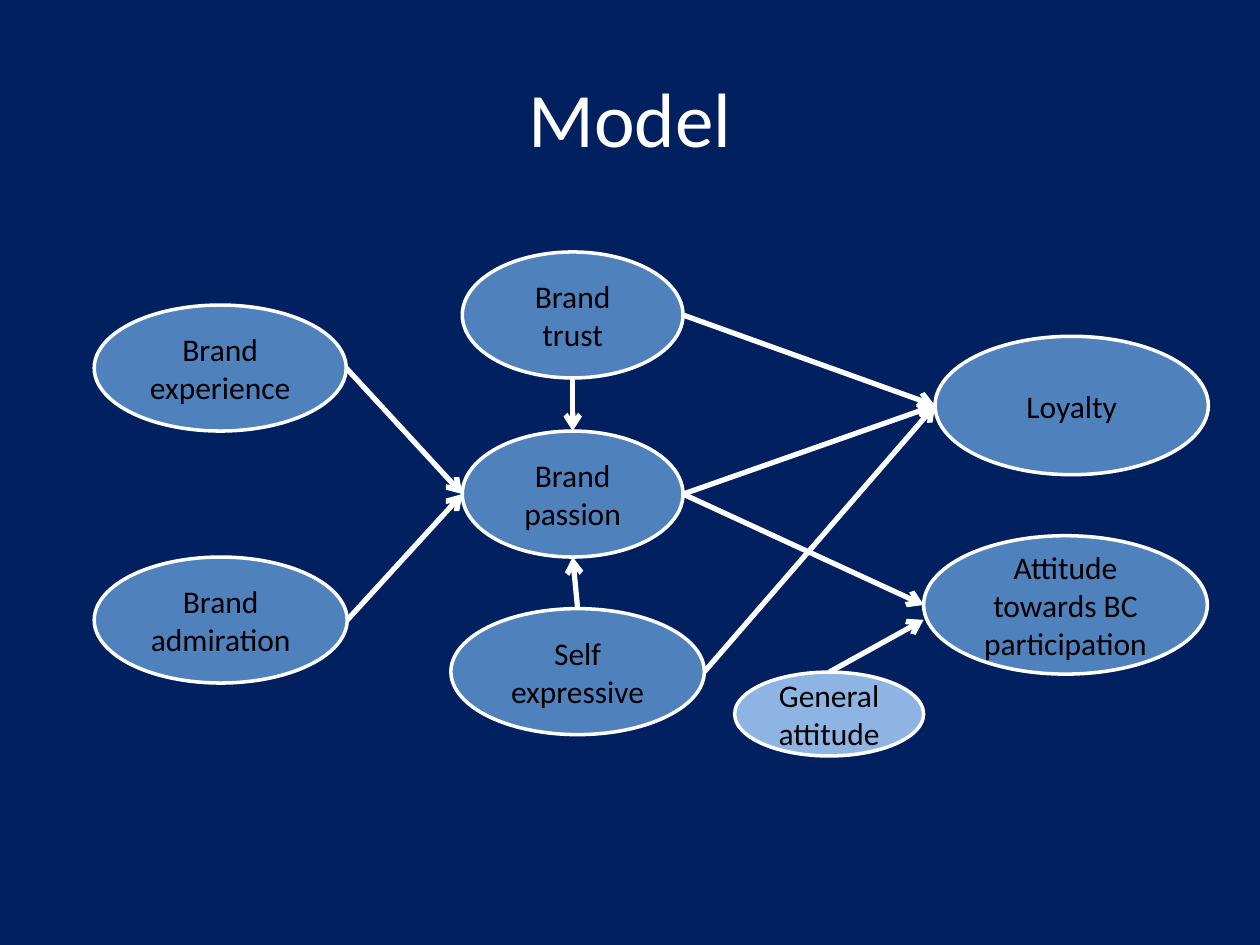
from lxml.etree import SubElement
from pptx import Presentation
from pptx.dml.color import RGBColor
from pptx.enum.shapes import MSO_CONNECTOR as Connector, MSO_SHAPE as Shape
from pptx.enum.text import MSO_ANCHOR as Anchor, PP_ALIGN as Align
from pptx.oxml.ns import qn
from pptx.util import Cm, Pt

NAVY = RGBColor(0x00, 0x20, 0x60)
BLUE = RGBColor(0x4F, 0x81, 0xBD)
LIGHT_BLUE = RGBColor(0x8E, 0xB4, 0xE3)
WHITE = RGBColor(0xFF, 0xFF, 0xFF)
BLACK = RGBColor(0x00, 0x00, 0x00)
FONT = "Calibri"

CONSTRUCTS = [
    ("Loyalty", 18.85, 6.78, 5.51, 2.79, BLUE),
    ("Self expressive", 9.09, 12.27, 5.11, 2.54, BLUE),
    ("Brand passion", 9.32, 8.69, 4.45, 2.54, BLUE),
    ("Brand trust", 9.32, 5.08, 4.45, 2.54, BLUE),
    ("Brand experience", 1.9, 6.15, 5.08, 2.54, BLUE),
    ("Brand admiration", 1.9, 11.23, 5.1, 2.54, BLUE),
    ("Attitude towards BC participation", 18.62, 10.8, 5.72, 2.79, BLUE),
    ("General attitude", 14.81, 13.55, 3.81, 1.69, LIGHT_BLUE),
]

EFFECTS = [
    ("Brand trust", "bottom", "Brand passion", "top", 0),
    ("Brand admiration", "right", "Brand passion", "left", 0),
    ("Brand experience", "right", "Brand passion", "left", 0),
    ("Self expressive", "top", "Brand passion", "bottom", 0),
    ("Brand passion", "right", "Loyalty", "left", 0),
    ("Self expressive", "right", "Loyalty", "left", 0),
    ("Brand trust", "right", "Loyalty", "left", 0),
    ("Brand passion", "right", "Attitude towards BC participation", "left", 0),
    ("General attitude", "top", "Attitude towards BC participation", "left", 0.3),
]

SIDES = {"top": (0.5, 0), "left": (0, 0.5), "bottom": (0.5, 1), "right": (1, 0.5)}


def write_text(holder, wording, size, color):
    frame = holder.text_frame
    frame.word_wrap = True
    frame.vertical_anchor = Anchor.MIDDLE
    paragraph = frame.paragraphs[0]
    paragraph.alignment = Align.CENTER
    run = paragraph.add_run()
    run.text = wording
    run.font.name = FONT
    run.font.size = Pt(size)
    run.font.color.rgb = color


def add_title(slide, wording):
    title = slide.shapes.add_textbox(Cm(1.27), Cm(0.76), Cm(22.86), Cm(3.18))
    write_text(title, wording, 44, WHITE)


def add_construct(slide, name, left, top, width, height, color):
    construct = slide.shapes.add_shape(
        Shape.OVAL, Cm(left), Cm(top), Cm(width), Cm(height))
    construct.shadow.inherit = False
    construct.fill.solid()
    construct.fill.fore_color.rgb = color
    construct.line.color.rgb = WHITE
    construct.line.width = Pt(2)
    write_text(construct, name, 18, BLACK)
    return construct


def side_middle(construct, side):
    across, down = SIDES[side]
    return (int(construct.left + across * construct.width),
            int(construct.top + down * construct.height))


def add_effect(slide, cause, cause_side, outcome, outcome_side, drop):
    start = side_middle(cause, cause_side)
    end_x, end_y = side_middle(outcome, outcome_side)
    effect = slide.shapes.add_connector(
        Connector.STRAIGHT, *start, end_x, end_y + Cm(drop))
    effect.line.color.rgb = WHITE
    effect.line.width = Pt(3)
    SubElement(effect.line._get_or_add_ln(), qn("a:tailEnd"), type="arrow")
    SubElement(effect._element.spPr, qn("a:effectLst"))


def main():
    deck = Presentation()
    deck.slide_width, deck.slide_height = Cm(25.4), Cm(19.05)
    slide = deck.slides.add_slide(deck.slide_layouts[6])
    slide.background.fill.solid()
    slide.background.fill.fore_color.rgb = NAVY

    add_title(slide, "Model")
    constructs = {row[0]: add_construct(slide, *row) for row in CONSTRUCTS}
    for cause, cause_side, outcome, outcome_side, drop in EFFECTS:
        add_effect(slide, constructs[cause], cause_side,
                   constructs[outcome], outcome_side, drop)
    deck.save("out.pptx")


if __name__ == "__main__":
    main()
